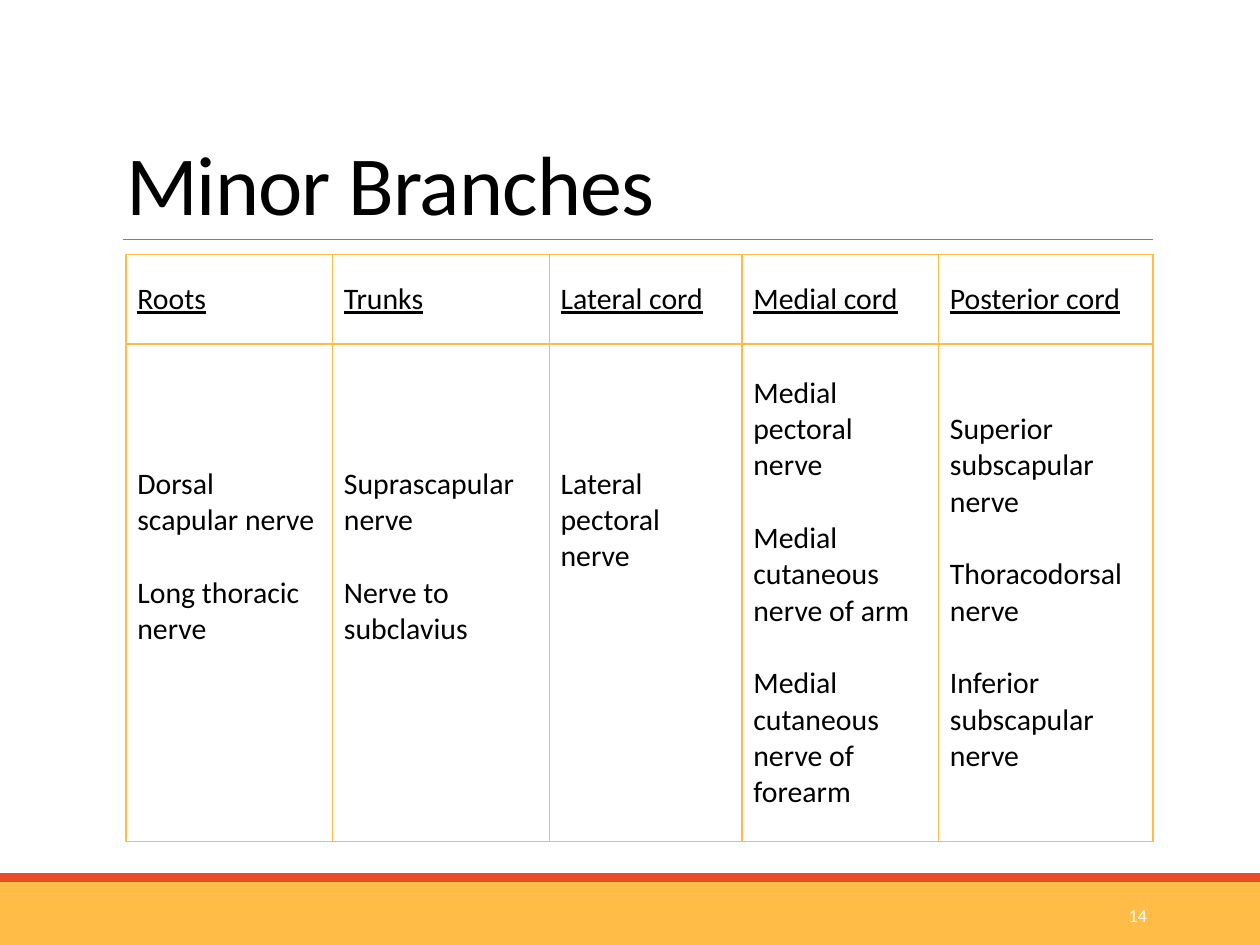
"""Build the Minor Branches slide with its table of nerves."""
import pptx
import pptx.dml.color
import pptx.enum.shapes
import pptx.enum.text
import pptx.oxml
import pptx.oxml.ns
import pptx.util
from pptx.util import Inches

COLORS = {"gold": "FFBD47", "red": "E84C22", "gray": "808080",
          "black": "000000", "white": "FFFFFF"}
LINE_HEIGHT = 20.75
BODY_LINES = 5
COLUMNS = [
    ("Roots", 1.64, ["Dorsal scapular nerve", "Long thoracic nerve"]),
    ("Trunks", 1.72, ["Suprascapular nerve", "Nerve to subclavius"]),
    ("Lateral cord", 1.53, ["Lateral pectoral nerve"]),
    ("Medial cord", 1.56, ["Medial pectoral nerve", "Medial cutaneous nerve of arm",
                           "Medial cutaneous nerve of forearm"]),
    ("Posterior cord", 1.7, ["Superior subscapular nerve", "Thoracodorsal nerve",
                             "Inferior subscapular nerve"]),
]


class SlideBuilder:
    """Hold the style and the current slide."""

    font_name = "Calibri"

    def __init__(self, slide):
        self.slide = slide

    def color(self, name):
        return pptx.dml.color.RGBColor.from_string(COLORS[name])

    def format(self, paragraph, size, color, align="LEFT"):
        paragraph.alignment = getattr(pptx.enum.text.PP_ALIGN, align)
        paragraph.font.name = self.font_name
        paragraph.font.size = pptx.util.Pt(size)
        paragraph.font.color.rgb = self.color(color)

    def band(self, top, height, color):
        shape = self.slide.shapes.add_shape(
            pptx.enum.shapes.MSO_SHAPE.RECTANGLE, 0, Inches(top), Inches(10), Inches(height))
        shape.shadow.inherit = False
        shape.fill.solid()
        shape.fill.fore_color.rgb = self.color(color)
        shape.line.fill.background()

    def rule(self, left, right, top):
        connector = self.slide.shapes.add_connector(
            pptx.enum.shapes.MSO_CONNECTOR.STRAIGHT,
            Inches(left), Inches(top), Inches(right), Inches(top))
        connector.line.color.rgb = self.color("gray")
        connector.line.width = pptx.util.Pt(0.5)
        properties = connector._element.spPr
        properties.append(pptx.oxml.parse_xml(
            f"<a:effectLst {pptx.oxml.ns.nsdecls('a')}/>"))

    def title(self, text, left, top, width, height):
        shape = self.slide.shapes.title
        shape.left, shape.top = Inches(left), Inches(top)
        shape.width, shape.height = Inches(width), Inches(height)
        shape.text_frame.text = text
        shape.text_frame.vertical_anchor = pptx.enum.text.MSO_ANCHOR.BOTTOM
        paragraph = shape.text_frame.paragraphs[0]
        paragraph.line_spacing = 0.85
        self.format(paragraph, 48, "black")
        paragraph.runs[0].font._element.set("spc", "-50")

    def text(self, text, left, top, width, height):
        box = self.slide.shapes.add_textbox(
            Inches(left), Inches(top), Inches(width), Inches(height))
        frame = box.text_frame
        frame.word_wrap = True
        frame.vertical_anchor = pptx.enum.text.MSO_ANCHOR.MIDDLE
        frame.text = text
        self.format(frame.paragraphs[0], 10.5, "white", "RIGHT")

    def borders(self, cell):
        properties = cell._tc.get_or_add_tcPr()
        for index, side in enumerate(("lnL", "lnR", "lnT", "lnB")):
            properties.insert(index, pptx.oxml.parse_xml(
                f'<a:{side} {pptx.oxml.ns.nsdecls("a")} w="12700"><a:solidFill>'
                f'<a:srgbClr val="{COLORS["gold"]}"/></a:solidFill></a:{side}>'))

    def cell(self, cell, lines, underline=False, blank_lines=0):
        cell.fill.background()
        cell.vertical_anchor = pptx.enum.text.MSO_ANCHOR.MIDDLE
        cell.margin_left = cell.margin_right = Inches(0.09)
        cell.margin_top = Inches(0.05)
        cell.margin_bottom = Inches(0.05) + pptx.util.Pt(LINE_HEIGHT * blank_lines)
        cell.text = "\n".join(lines)
        for index, paragraph in enumerate(cell.text_frame.paragraphs):
            self.format(paragraph, 17, "black")
            paragraph.font.underline = underline
            paragraph.space_before = pptx.util.Pt(LINE_HEIGHT if index else 0)
        self.borders(cell)

    def table(self, columns, left, top, row_heights):
        width = sum(column_width for _, column_width, _ in columns)
        table = self.slide.shapes.add_table(
            len(row_heights), len(columns), Inches(left), Inches(top),
            Inches(width), Inches(sum(row_heights))).table
        table.first_row = table.horz_banding = False
        for row, height in zip(table.rows, row_heights):
            row.height = Inches(height)
        for index, (heading, column_width, nerves) in enumerate(columns):
            table.columns[index].width = Inches(column_width)
            self.cell(table.cell(0, index), [heading], underline=True)
            self.cell(table.cell(1, index), nerves,
                      blank_lines=BODY_LINES - (2 * len(nerves) - 1))


def main():
    presentation = pptx.Presentation()
    presentation.slide_width, presentation.slide_height = Inches(10), Inches(7.5)
    builder = SlideBuilder(presentation.slides.add_slide(presentation.slide_layouts[5]))
    builder.band(7, 0.5, "gold")
    builder.band(6.93, 0.07, "red")
    builder.rule(0.98, 9.15, 1.9)
    builder.title("Minor Branches", 0.9, 0.31, 8.25, 1.59)
    builder.table(COLUMNS, 1, 2.02, [0.71, 3.95])
    builder.text("14", 8.12, 7.06, 1.08, 0.4)
    presentation.save("out.pptx")


if __name__ == "__main__":
    main()
